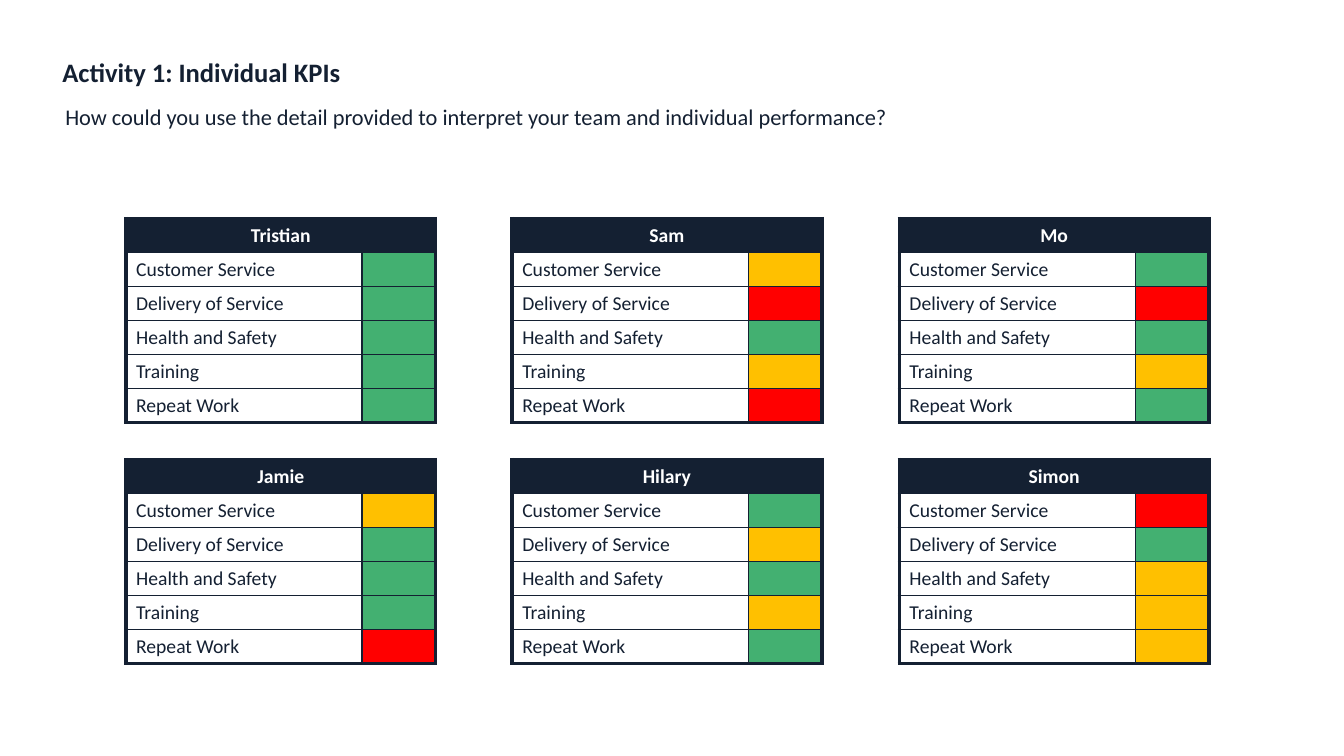
from lxml import etree
from pptx import Presentation
from pptx import util as u
from pptx.dml.color import RGBColor
from pptx.enum import text
from pptx.oxml import ns

PX = 9144
FONT = "Calibri"
NAVY = RGBColor(0x14, 0x20, 0x32)
WHITE = RGBColor(0xFF, 0xFF, 0xFF)
GREEN = RGBColor(0x43, 0xB0, 0x71)
AMBER = RGBColor(0xFF, 0xC0, 0x00)
RED = RGBColor(0xFF, 0x00, 0x00)
RATINGS = {"G": GREEN, "A": AMBER, "R": RED}

KPIS = ("Customer Service", "Delivery of Service", "Health and Safety", "Training", "Repeat Work")
TEAM = (
    (("Tristian", "GGGGG"), ("Sam", "ARGAR"), ("Mo", "GRGAG")),
    (("Jamie", "AGGGR"), ("Hilary", "GAGAG"), ("Simon", "RGAAA")),
)
CARD_WIDTH, CARD_HEIGHT, RATING_WIDTH = 307, 200, 73
THIN, THICK = 1, 3


def px(*lengths):
    return [u.Emu(length * PX) for length in lengths]


def set_font(paragraph, size, color, bold=False):
    font = paragraph.font
    font.name, font.size, font.bold = FONT, u.Pt(size), bold
    font.color.rgb = color


def add_text(slide, box, wording, size, bold=False, anchor=text.MSO_ANCHOR.TOP):
    frame = slide.shapes.add_textbox(*px(*box)).text_frame
    frame.word_wrap = True
    frame.vertical_anchor = anchor
    paragraph = frame.paragraphs[0]
    paragraph.text = wording
    paragraph.line_spacing = 0.9
    set_font(paragraph, size, NAVY, bold)


def add_heading(slide, left, top):
    add_text(slide, (left, top, 636, 28), "Activity 1: Individual KPIs", 19, True,
             text.MSO_ANCHOR.MIDDLE)
    add_text(slide, (left + 3, top + 41, 1143, 42),
             "How could you use the detail provided to interpret your team and individual performance?", 16)


def set_borders(cell, **widths):
    properties = cell._tc.get_or_add_tcPr()
    for side in "LRTB":
        line = etree.SubElement(properties, ns.qn(f"a:ln{side}"), w=str(u.Pt(widths.get(side, THIN))))
        fill = etree.SubElement(line, ns.qn("a:solidFill"))
        etree.SubElement(fill, ns.qn("a:srgbClr"), val=str(NAVY))


def fill_cell(cell, color):
    cell.fill.solid()
    cell.fill.fore_color.rgb = color


def add_scorecard(slide, left, top, name, ratings):
    row_count = len(KPIS) + 1
    table = slide.shapes.add_table(row_count, 2, *px(left, top, CARD_WIDTH, CARD_HEIGHT)).table
    table.horz_banding = False
    table.columns[0].width, table.columns[1].width = px(CARD_WIDTH - RATING_WIDTH, RATING_WIDTH)

    for cell in table.rows[0].cells:
        set_borders(cell, L=THICK, T=THICK, R=THICK)
        fill_cell(cell, NAVY)
    header = table.cell(0, 0)
    header.merge(table.cell(0, 1))
    header.text = name
    paragraph = header.text_frame.paragraphs[0]
    paragraph.alignment = text.PP_ALIGN.CENTER
    set_font(paragraph, 14, WHITE, True)

    for row, (kpi, rating) in enumerate(zip(KPIS, ratings), 1):
        label, status = table.rows[row].cells
        bottom = THICK if row == len(KPIS) else THIN
        set_borders(label, L=THICK, B=bottom)
        set_borders(status, R=THICK, B=bottom)
        fill_cell(label, WHITE)
        fill_cell(status, RATINGS[rating])
        label.text = kpi
        set_font(label.text_frame.paragraphs[0], 14, NAVY)
        status.margin_top = status.margin_bottom = 0
        set_font(status.text_frame.paragraphs[0], 14, NAVY)


def add_scorecards(slide, left, top, width, height):
    for row, members in enumerate(TEAM):
        for column, (name, ratings) in enumerate(members):
            card_left = left + column * (width - CARD_WIDTH) // (len(members) - 1)
            card_top = top + row * (height - CARD_HEIGHT) // (len(TEAM) - 1)
            add_scorecard(slide, card_left, card_top, name, ratings)


def main():
    presentation = Presentation()
    presentation.slide_width, presentation.slide_height = px(1333, 750)
    slide = presentation.slides.add_slide(presentation.slide_layouts[6])
    add_scorecards(slide, 125, 217, 1074, 439)
    add_heading(slide, 52, 59)
    presentation.save("out.pptx")


if __name__ == "__main__":
    main()
